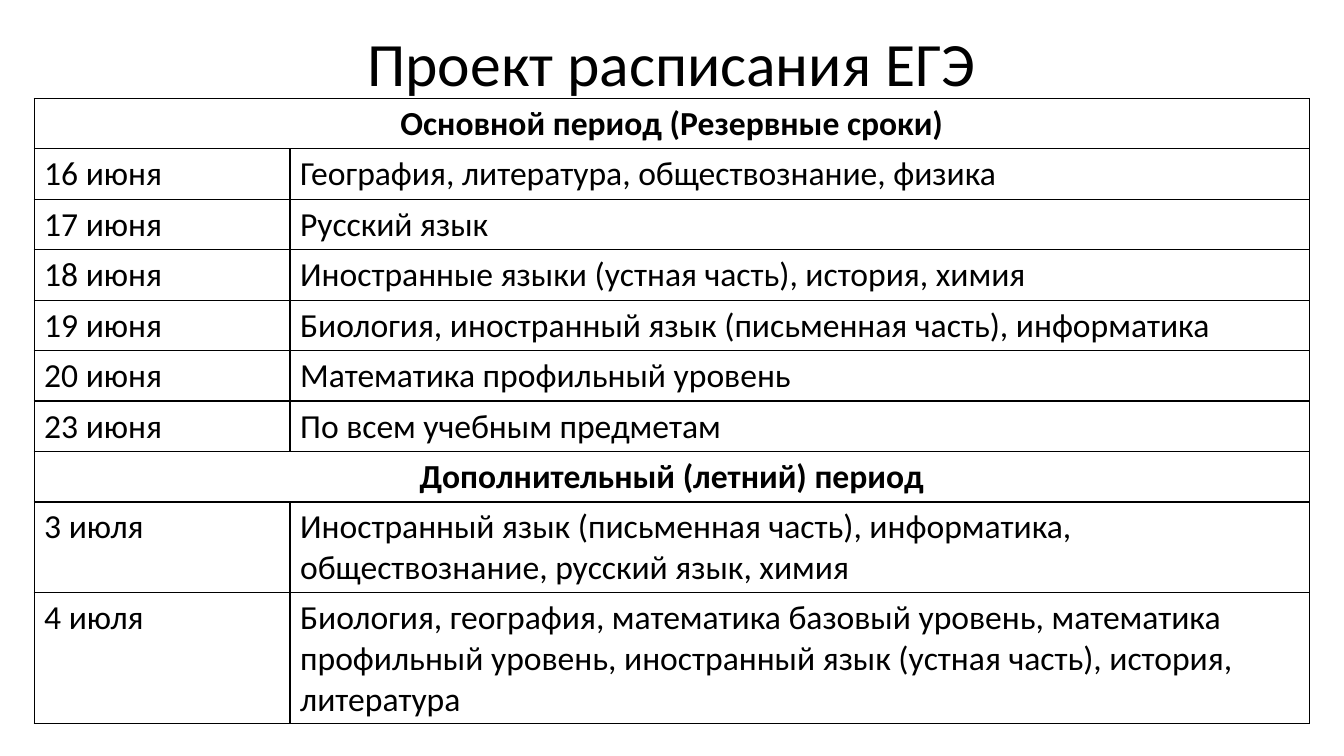
"""Build a slide with the reserve and summer exam timetable."""
import pptx
import pptx.dml.color
import pptx.enum.text
import pptx.oxml.ns
import pptx.util
from lxml import etree
from pptx.util import Cm

COLOURS = {"text": "000000", "border": "000000", "cell": "FFFFFF"}
FONT = "Calibri"
ROW_HEIGHT = Cm(1.04)
COLUMN_WIDTHS = (Cm(6.45), Cm(25.69))
SCHEDULE = [
    ("Основной период (Резервные сроки)",),
    ("16 июня", "География, литература, обществознание, физика"),
    ("17 июня", "Русский язык"),
    ("18 июня", "Иностранные языки (устная часть), история, химия"),
    ("19 июня", "Биология, иностранный язык (письменная часть), информатика"),
    ("20 июня", "Математика профильный уровень"),
    ("23 июня", "По всем учебным предметам"),
    ("Дополнительный (летний) период",),
    ("3 июля", "Иностранный язык (письменная часть), информатика, "
               "обществознание, русский язык, химия"),
    ("4 июля", "Биология, география, математика базовый уровень, "
               "математика профильный уровень, иностранный язык "
               "(устная часть), история, литература"),
]


def rgb(name):
    """Return the named colour."""
    return pptx.dml.color.RGBColor.from_string(COLOURS[name])


def write(frame, text, size, bold=False, centred=False):
    """Add one run of text to the first paragraph of a frame."""
    paragraph = frame.paragraphs[0]
    align = pptx.enum.text.PP_ALIGN
    paragraph.alignment = align.CENTER if centred else align.LEFT
    run = paragraph.add_run()
    run.text = text
    run.font.name = FONT
    run.font.size = pptx.util.Pt(size)
    run.font.bold = bold
    run.font.color.rgb = rgb("text")
    return paragraph


def style_cell(cell):
    """Give a cell thin borders and a plain fill."""
    qn = pptx.oxml.ns.qn
    properties = cell._tc.get_or_add_tcPr()
    for side in ("lnL", "lnR", "lnT", "lnB"):
        border = etree.SubElement(properties, qn(f"a:{side}"),
                                  w=str(pptx.util.Pt(1)))
        fill = etree.SubElement(border, qn("a:solidFill"))
        etree.SubElement(fill, qn("a:srgbClr"), val=COLOURS["border"])
    cell.fill.solid()
    cell.fill.fore_color.rgb = rgb("cell")


def add_title(slide, text):
    """Add the centred heading."""
    heading = slide.shapes.add_textbox(Cm(2.33), Cm(0.53), Cm(29.21), Cm(2.31))
    frame = heading.text_frame
    frame.word_wrap = True
    frame.vertical_anchor = pptx.enum.text.MSO_ANCHOR.MIDDLE
    write(frame, text, 44, centred=True).line_spacing = 0.9


def add_schedule(slide):
    """Add the timetable, with period names across both columns."""
    timetable = slide.shapes.add_table(
        len(SCHEDULE), len(COLUMN_WIDTHS), Cm(0.86), Cm(2.48),
        sum(COLUMN_WIDTHS), ROW_HEIGHT * len(SCHEDULE)).table
    for column, width in zip(timetable.columns, COLUMN_WIDTHS):
        column.width = width
    for row, entries in enumerate(SCHEDULE):
        timetable.rows[row].height = ROW_HEIGHT
        for column in range(len(COLUMN_WIDTHS)):
            style_cell(timetable.cell(row, column))
        is_period = len(entries) == 1
        if is_period:
            timetable.cell(row, 0).merge(timetable.cell(row, 1))
        for column, entry in enumerate(entries):
            write(timetable.cell(row, column).text_frame, entry, 24,
                  bold=is_period, centred=is_period)


def main():
    """Create and save the presentation."""
    presentation = pptx.Presentation()
    presentation.slide_width = Cm(33.87)
    presentation.slide_height = Cm(19.05)
    slide = presentation.slides.add_slide(presentation.slide_layouts[6])
    add_title(slide, "Проект расписания ЕГЭ")
    add_schedule(slide)
    presentation.save("out.pptx")


if __name__ == "__main__":
    main()
